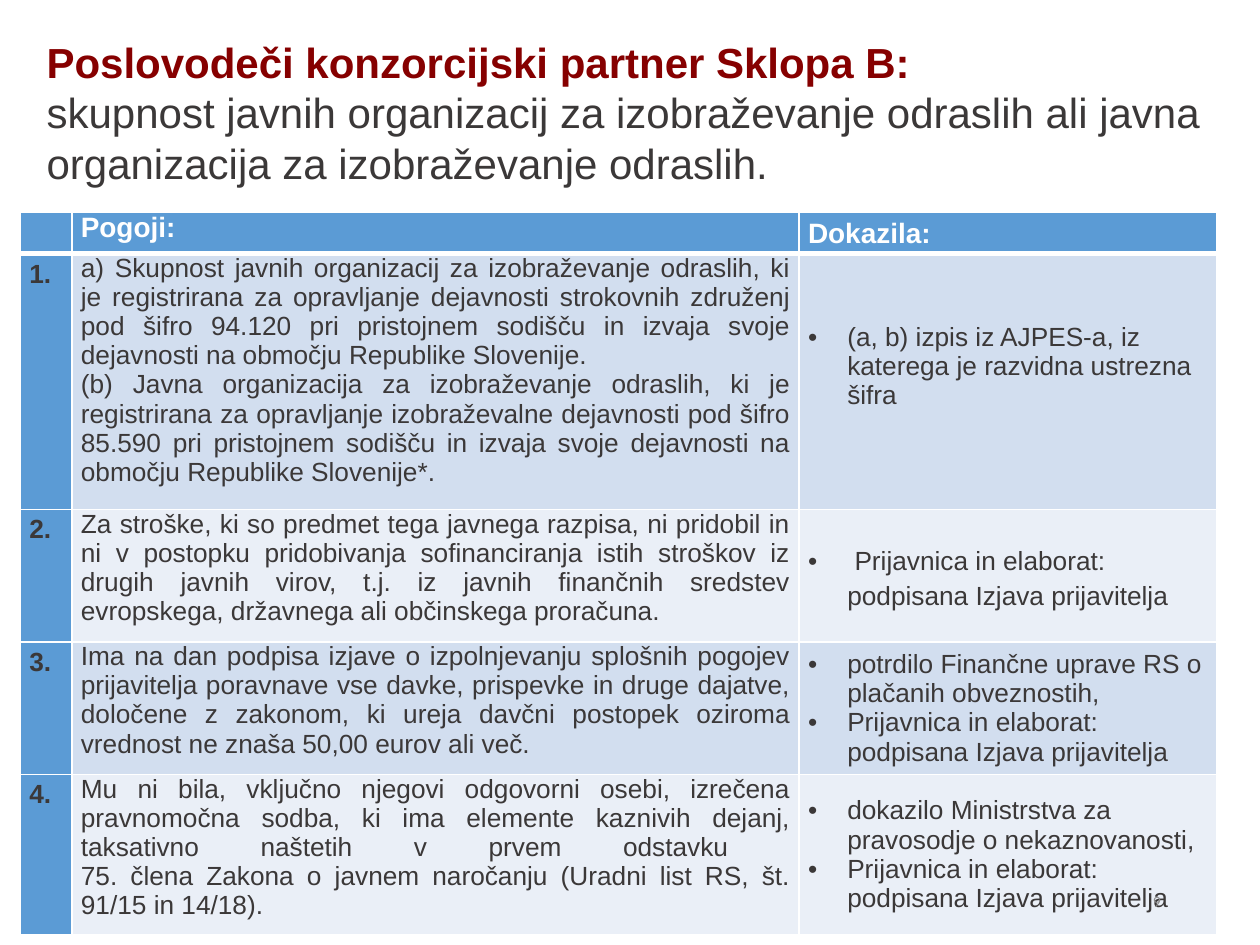
from lxml import etree
from pptx import Presentation
from pptx import util as u
from pptx.dml.color import RGBColor
from pptx.enum import text
from pptx.oxml.ns import qn

COLORS = {
    "white": "FFFFFF", "header": "5B9BD5", "odd": "D2DEEF", "even": "EAEFF7",
    "text": "3B3838", "title": "860000", "number": "8C8C8C",
}
TITLE = "Poslovodeči konzorcijski partner Sklopa B:"
SUBTITLE = ("skupnost javnih organizacij za izobraževanje odraslih ali javna "
            "organizacija za izobraževanje odraslih.")
HEADERS = ["", "Pogoji:", "Dokazila:"]
STATEMENT = "Prijavnica in elaborat: podpisana Izjava prijavitelja"
CONDITIONS = [
    (["a) Skupnost javnih organizacij za izobraževanje odraslih, ki je registrirana za "
      "opravljanje dejavnosti strokovnih združenj pod šifro 94.120 pri pristojnem sodišču "
      "in izvaja svoje dejavnosti na območju Republike Slovenije.",
      "(b) Javna organizacija za izobraževanje odraslih, ki je registrirana za opravljanje "
      "izobraževalne dejavnosti pod šifro 85.590 pri pristojnem sodišču in izvaja svoje "
      "dejavnosti na območju Republike Slovenije*."],
     ["(a, b) izpis iz AJPES-a, iz katerega je razvidna ustrezna šifra"]),
    (["Za stroške, ki so predmet tega javnega razpisa, ni pridobil in ni v postopku "
      "pridobivanja sofinanciranja istih stroškov iz drugih javnih virov, t.j. iz javnih "
      "finančnih sredstev evropskega, državnega ali občinskega proračuna."],
     [" " + STATEMENT]),
    (["Ima na dan podpisa izjave o izpolnjevanju splošnih pogojev prijavitelja poravnave "
      "vse davke, prispevke in druge dajatve, določene z zakonom, ki ureja davčni postopek "
      "oziroma vrednost ne znaša 50,00 eurov ali več."],
     ["potrdilo Finančne uprave RS o plačanih obveznostih,", STATEMENT]),
    (["Mu ni bila, vključno njegovi odgovorni osebi, izrečena pravnomočna sodba, ki ima "
      "elemente kaznivih dejanj, taksativno naštetih v prvem odstavku \v"
      "75. člena Zakona o javnem naročanju (Uradni list RS, št. 91/15 in 14/18)."],
     ["dokazilo Ministrstva za pravosodje o nekaznovanosti,", STATEMENT]),
]
COLUMN_WIDTHS = [1.04, 14.66, 8.41]
ROW_HEIGHTS = [0.84, 5.16, 2.67, 2.67, 3.23]
LEFT, TOP = 0.41, 4.27
JUSTIFY = text.PP_ALIGN.JUSTIFY


def rgb(name):
    return RGBColor.from_string(COLORS[name])


def set_font(paragraph, size, color, bold=False, name="Arial"):
    font = paragraph.font
    font.size, font.bold, font.name = u.Pt(size), bold, name
    font.color.rgb = rgb(color)


def add_bullet(paragraph):
    properties = paragraph._p.get_or_add_pPr()
    properties.set("marL", str(u.Cm(0.79)))
    properties.set("indent", str(-u.Cm(0.79)))
    etree.SubElement(properties, qn("a:buFont")).set("typeface", "Arial")
    etree.SubElement(properties, qn("a:buChar")).set("char", "•")


def set_borders(cell, bottom):
    properties = cell._tc.get_or_add_tcPr()
    sides = [("lnL", 1), ("lnR", 1), ("lnT", 1), ("lnB", bottom)]
    for index, (side, width) in enumerate(sides):
        line = etree.Element(qn("a:" + side), w=str(u.Pt(width)))
        fill = etree.SubElement(line, qn("a:solidFill"))
        etree.SubElement(fill, qn("a:srgbClr")).set("val", COLORS["white"])
        properties.insert(index, line)


def fill_cell(cell, lines, fill, size, color, bold=False, spacing=None, bullets=False):
    cell.margin_left = cell.margin_right = u.Cm(0.18)
    cell.margin_top = cell.margin_bottom = 0
    cell.fill.solid()
    cell.fill.fore_color.rgb = rgb(fill)
    cell.text_frame.text = "\n".join(lines)
    for paragraph in cell.text_frame.paragraphs:
        if bullets:
            add_bullet(paragraph)
        else:
            paragraph.alignment = JUSTIFY
        if spacing:
            paragraph.line_spacing = spacing
        set_font(paragraph, size, color, bold)
    if bullets:
        cell.vertical_anchor = text.MSO_ANCHOR.MIDDLE


def add_conditions_table(slide):
    table = slide.shapes.add_table(
        len(ROW_HEIGHTS), len(COLUMN_WIDTHS), u.Cm(LEFT), u.Cm(TOP),
        u.Cm(sum(COLUMN_WIDTHS)), u.Cm(sum(ROW_HEIGHTS))).table
    for column, width in zip(table.columns, COLUMN_WIDTHS):
        column.width = u.Cm(width)
    for row, height in zip(table.rows, ROW_HEIGHTS):
        row.height = u.Cm(height)

    for index, header in enumerate(HEADERS):
        spacing = 1.2 if header == "Dokazila:" else None
        fill_cell(table.cell(0, index), [header], "header", 16, "white", True, spacing)
    for number, (condition, evidence) in enumerate(CONDITIONS, 1):
        band = "odd" if number % 2 else "even"
        fill_cell(table.cell(number, 0), [f"{number}."], "header", 15, "text", True, 1.2)
        fill_cell(table.cell(number, 1), condition, band, 15, "text")
        fill_cell(table.cell(number, 2), evidence, band, 15, "text",
                  spacing=1.2 if number == 2 else None, bullets=True)
    table.cell(1, 2).margin_bottom = u.Cm(0.61)
    for row_index, row in enumerate(table.rows):
        for cell in row.cells:
            set_borders(cell, 1 if row_index else 3)


def add_text(slide, left, top, width, height, lines):
    box = slide.shapes.add_textbox(u.Cm(left), u.Cm(top), u.Cm(width), u.Cm(height))
    frame = box.text_frame
    frame.word_wrap = True
    frame.text = "\n".join(lines)
    return frame


def main():
    presentation = Presentation()
    presentation.slide_width, presentation.slide_height = u.Cm(25.4), u.Cm(19.05)
    slide = presentation.slides.add_slide(presentation.slide_layouts[6])
    add_conditions_table(slide)

    heading = add_text(slide, 0.69, 0.61, 24.31, 3.33, [TITLE, SUBTITLE])
    heading.auto_size = text.MSO_AUTO_SIZE.SHAPE_TO_FIT_TEXT
    set_font(heading.paragraphs[0], 24, "title", True)
    set_font(heading.paragraphs[1], 24, "text")

    page_number = add_text(slide, 17.93, 17.65, 5.72, 1.02, ["9"])
    page_number.vertical_anchor = text.MSO_ANCHOR.MIDDLE
    page_number.paragraphs[0].alignment = text.PP_ALIGN.RIGHT
    set_font(page_number.paragraphs[0], 9, "number", name="Calibri")

    presentation.save("out.pptx")


if __name__ == "__main__":
    main()
